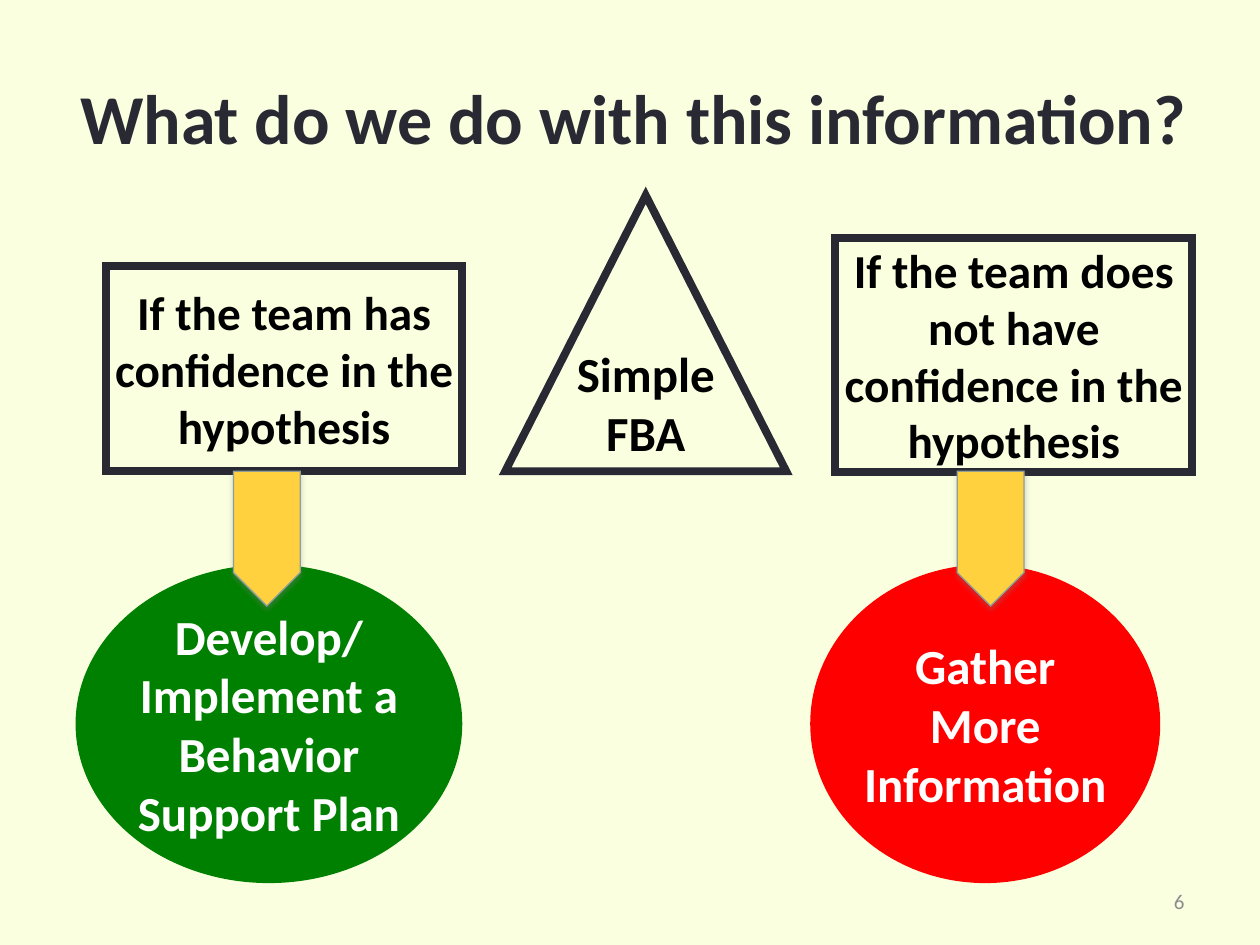
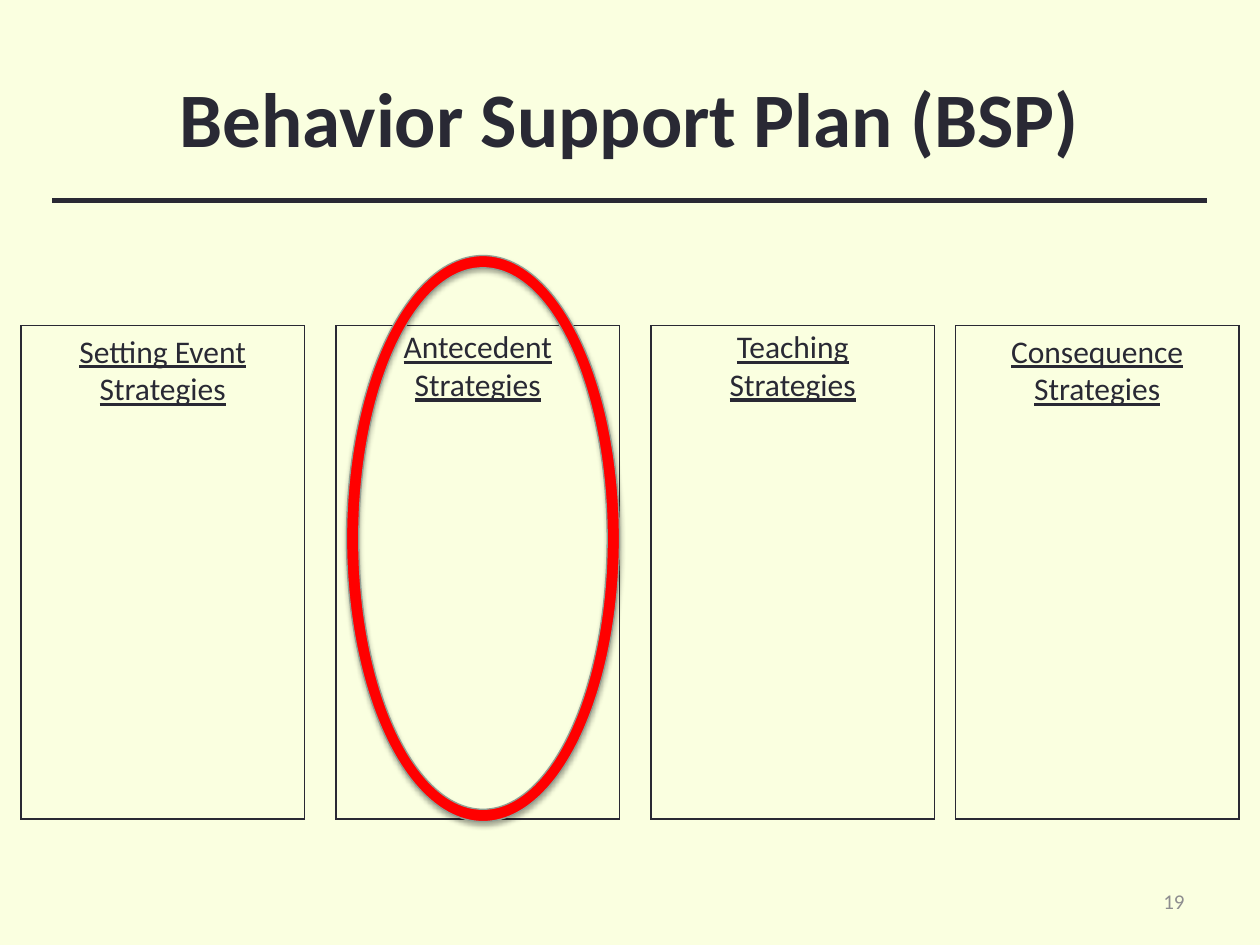
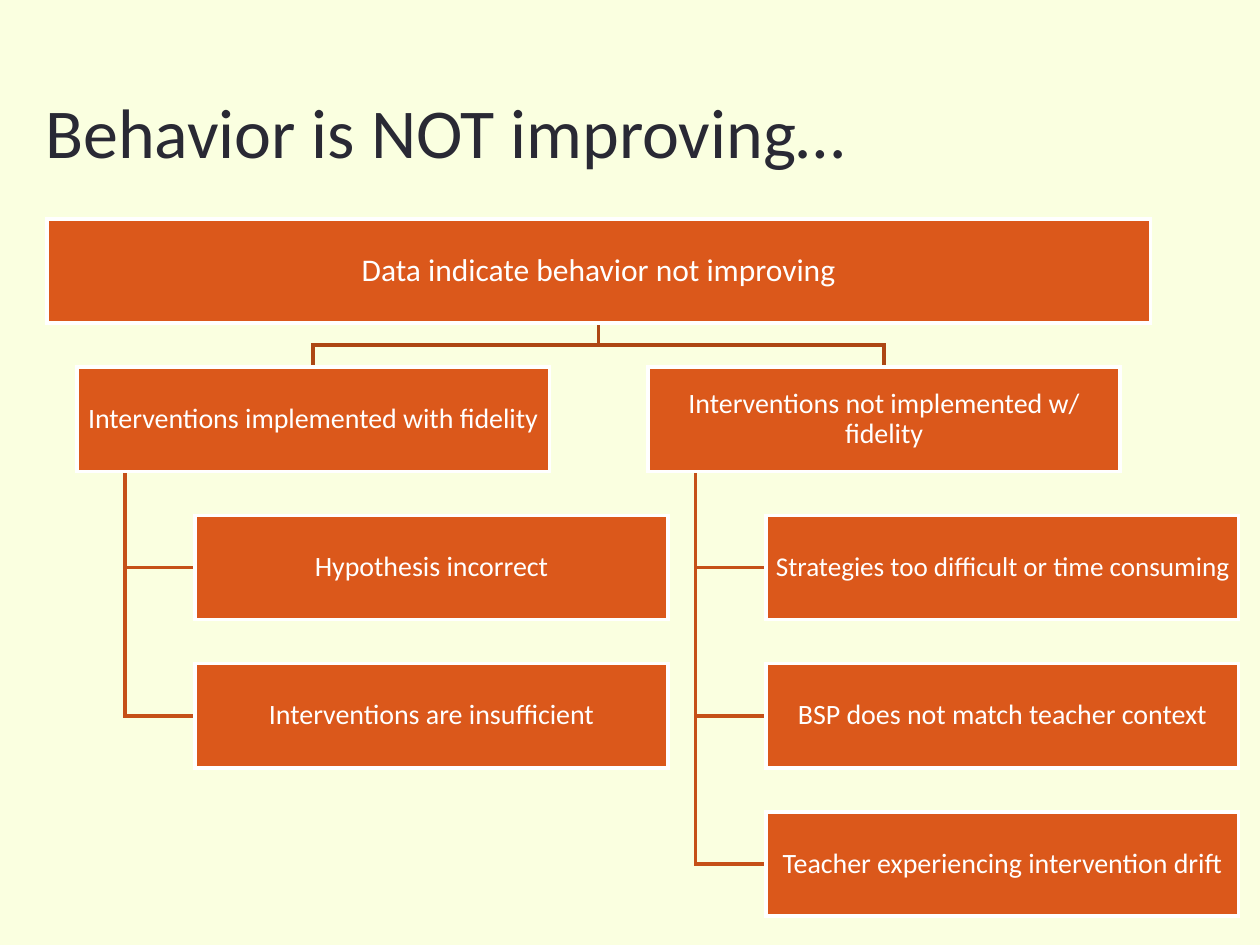
"""Builds three slides on behavior support plans."""
from dataclasses import dataclass
from typing import Optional

from lxml.etree import SubElement
from pptx import Presentation
from pptx.dml.color import RGBColor
from pptx.enum.shapes import MSO_CONNECTOR as Connector, MSO_SHAPE as Preset
from pptx.enum.text import MSO_ANCHOR as Anchor, MSO_AUTO_SIZE as AutoSize, PP_ALIGN as Align
from pptx.oxml.ns import qn
from pptx.util import Pt

FONT = "Calibri"
COLORS = {
    "background": "FAFFE0", "ink": "292934", "black": "000000", "white": "FFFFFF",
    "green": "008000", "red": "FF0000", "yellow": "FFD13F", "edge": "8F9F95",
    "gray": "8D8D8F", "shadow": "808080", "orange": "DB581B",
    "trunk": "AD4714", "branch": "C55018",
}


@dataclass(frozen=True)
class Box:
    left: float
    top: float
    width: float
    height: float

    @property
    def center(self) -> float:
        return self.left + self.width / 2

    @property
    def middle(self) -> float:
        return self.top + self.height / 2

    @property
    def bottom(self) -> float:
        return self.top + self.height

    def lengths(self) -> list:
        return [Pt(value) for value in (self.left, self.top, self.width, self.height)]


@dataclass(frozen=True)
class TextStyle:
    size: float
    color: str = "ink"
    bold: bool = False
    underline: bool = False
    align: Align = Align.CENTER
    anchor: Anchor = Anchor.MIDDLE
    spacing: float = 1.0


@dataclass(frozen=True)
class Figure:
    preset: Preset
    box: Box
    fill: Optional[str] = None
    line: Optional[str] = None
    weight: float = 0.75
    text: str = ""
    style: Optional[TextStyle] = None
    inset: float = 0
    adjustments: tuple = ()
    shadow: Optional[str] = None


@dataclass(frozen=True)
class Branch:
    text: str
    left: float
    causes: tuple


def rgb(name: str) -> RGBColor:
    return RGBColor.from_string(COLORS[name])


def write(frame, text: str, style: TextStyle, inset: Optional[float] = None) -> None:
    frame.text = text
    frame.word_wrap = True
    frame.auto_size = AutoSize.NONE
    frame.vertical_anchor = style.anchor
    if inset is not None:
        frame.margin_left = frame.margin_right = Pt(inset)
        frame.margin_top = frame.margin_bottom = Pt(inset)
    for paragraph in frame.paragraphs:
        paragraph.alignment = style.align
        paragraph.line_spacing = style.spacing
        font = paragraph.font
        font.name, font.size = FONT, Pt(style.size)
        font.bold, font.underline = style.bold, style.underline
        font.color.rgb = rgb(style.color)


def add_shadow(shape, color: str) -> None:
    effects = shape._element.spPr.find(qn("a:effectLst"))
    outer = SubElement(effects, qn("a:outerShdw"), blurRad=str(Pt(3.1)), dist=str(Pt(1.8)),
                       dir="5400000", rotWithShape="0")
    tint = SubElement(outer, qn("a:srgbClr"), val=COLORS[color])
    SubElement(tint, qn("a:alpha"), val="35000")


def set_outline(shape, color: str, weight: float) -> None:
    shape.line.color.rgb = rgb(color)
    shape.line.width = Pt(weight)
    SubElement(shape._element.spPr.find(qn("a:ln")), qn("a:miter"), lim="800000")


def add_figure(slide, figure: Figure) -> None:
    shape = slide.shapes.add_shape(figure.preset, *figure.box.lengths())
    shape.shadow.inherit = False
    for index, value in enumerate(figure.adjustments):
        shape.adjustments[index] = value
    if figure.fill:
        shape.fill.solid()
        shape.fill.fore_color.rgb = rgb(figure.fill)
    else:
        shape.fill.background()
    if figure.line:
        set_outline(shape, figure.line, figure.weight)
    else:
        shape.line.fill.background()
    if figure.shadow:
        add_shadow(shape, figure.shadow)
    if figure.style:
        write(shape.text_frame, figure.text, figure.style, figure.inset)


def add_text(slide, box: Box, text: str, style: TextStyle) -> None:
    write(slide.shapes.add_textbox(*box.lengths()).text_frame, text, style)


def add_polyline(slide, points: list, color: str) -> None:
    start, *others = [(Pt(x), Pt(y)) for x, y in points]
    builder = slide.shapes.build_freeform(*start)
    builder.add_line_segments(others, close=False)
    shape = builder.convert_to_shape()
    shape.shadow.inherit = False
    shape.fill.background()
    set_outline(shape, color, 2.08)


def add_slide(presentation, title: str, box: Box, style: TextStyle,
              number: Optional[int] = None):
    slide = presentation.slides.add_slide(presentation.slide_layouts[5])
    placeholder = slide.shapes.title
    placeholder.left, placeholder.top, placeholder.width, placeholder.height = box.lengths()
    write(placeholder.text_frame, title, style)
    if number is not None:
        add_text(slide, Box(516, 500.4, 168, 28.8), str(number),
                 TextStyle(12, "gray", align=Align.RIGHT))
    return slide


def build_decision(presentation) -> None:
    slide = add_slide(presentation, "What do we do with this information?",
                      Box(25.2, 21.6, 673.2, 90), TextStyle(40, bold=True), 6)
    condition = TextStyle(27, "black", bold=True)
    outcome = TextStyle(28, "white", bold=True)
    figures = [
        Figure(Preset.ISOSCELES_TRIANGLE, Box(288.7, 111.6, 160.6, 157.7), None, "ink", 4.5,
               "Simple FBA", TextStyle(28, "black", bold=True)),
        Figure(Preset.RECTANGLE, Box(60.5, 152, 203.8, 117.4), None, "ink", 4.5,
               "If the team has confidence in the hypothesis", condition),
        Figure(Preset.OVAL, Box(43.2, 322.6, 221, 182), "green",
               text="Develop/\nImplement a Behavior Support Plan", style=outcome),
        Figure(Preset.RECTANGLE, Box(477.4, 136, 203.8, 133.6), None, "ink", 4.5,
               "If the team does not have confidence in the hypothesis", condition),
        Figure(Preset.OVAL, Box(463, 322.6, 200, 182), "red",
               text="Gather More Information", style=outcome),
    ]
    figures += [Figure(Preset.DOWN_ARROW, Box(left, 269.3, 38.2, 77), "yellow", "edge",
                       adjustments=(1, 0.5), shadow="shadow") for left in (133.4, 547)]
    for figure in figures:
        add_figure(slide, figure)


def build_plan(presentation) -> None:
    slide = add_slide(presentation, "Behavior Support Plan (BSP)", Box(36, 21.6, 648, 90),
                      TextStyle(44, bold=True), 19)
    heading = TextStyle(18, underline=True, anchor=Anchor.TOP)
    columns = [
        ("Setting Event Strategies", 12, 186),
        ("Antecedent Strategies", 192, 183.6),
        ("Teaching Strategies", 372, 183.6),
        ("Consequence Strategies", 546, 186),
    ]
    for text, left, top in columns:
        add_figure(slide, Figure(Preset.RECTANGLE, Box(left, 186, 162, 282), None, "ink"))
        add_text(slide, Box(left + 6, top, 150, 50.4), text, heading)
    rule = slide.shapes.add_connector(Connector.STRAIGHT, Pt(30), Pt(114.5), Pt(690), Pt(114.5))
    rule.line.color.rgb = rgb("ink")
    rule.line.width = Pt(3)
    SubElement(rule._element.spPr, qn("a:effectLst"))
    add_figure(slide, Figure(Preset.DONUT, Box(198, 146, 156, 323.5), "red", "edge",
                             adjustments=(0.045,), shadow="black"))


def build_tree(presentation) -> None:
    slide = add_slide(presentation, "Behavior is NOT improving…", Box(18.7, 45.4, 600, 58.3),
                      TextStyle(40, align=Align.LEFT))
    top, row_step, height, width = 125.1, 84.7, 59.6, 270
    cause_indent, spine_indent = 67.6, 27.3
    branches = [
        Branch("Interventions implemented with fidelity", 44,
               ("Hypothesis incorrect", "Interventions are insufficient")),
        Branch("Interventions not implemented w/ fidelity", 370.2,
               ("Strategies too difficult or time consuming",
                "BSP does not match teacher context",
                "Teacher experiencing intervention drift")),
    ]
    root = Box(26.7, top, 630.8, height)
    nodes = [(root, "Data indicate behavior not improving", 18)]
    for branch in branches:
        box = Box(branch.left, top + row_step, width, height)
        nodes.append((box, branch.text, 16))
        fork = (root.bottom + box.top) / 2
        add_polyline(slide, [(root.center, root.bottom), (root.center, fork),
                             (box.center, fork), (box.center, box.top)], "trunk")
        spine = box.left + spine_indent
        for row, text in enumerate(branch.causes, start=2):
            cause = Box(box.left + cause_indent, top + row * row_step, width, height)
            nodes.append((cause, text, 15.5 if text.startswith("Strategies") else 16))
            add_polyline(slide, [(spine, box.bottom), (spine, cause.middle),
                                 (cause.left, cause.middle)], "branch")
    for box, text, size in nodes:
        add_figure(slide, Figure(Preset.RECTANGLE, box, "orange", "white", 2.08, text,
                                 TextStyle(size, "white", spacing=0.9), 0.7))


def main() -> None:
    presentation = Presentation()
    presentation.slide_width, presentation.slide_height = Pt(720), Pt(540)
    background = presentation.slide_master.background.fill
    background.solid()
    background.fore_color.rgb = rgb("background")
    for build in (build_decision, build_plan, build_tree):
        build(presentation)
    presentation.save("out.pptx")


if __name__ == "__main__":
    main()
